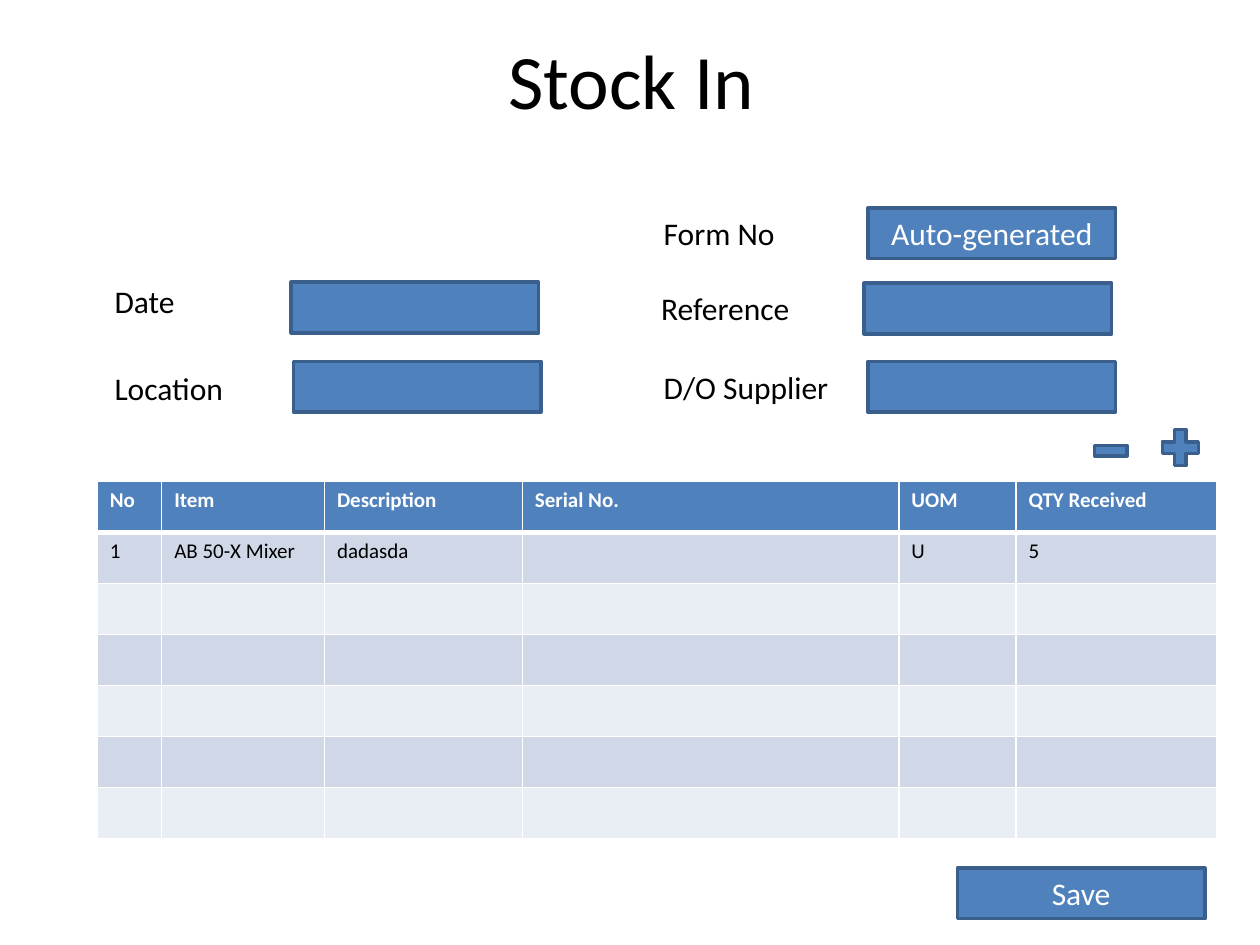
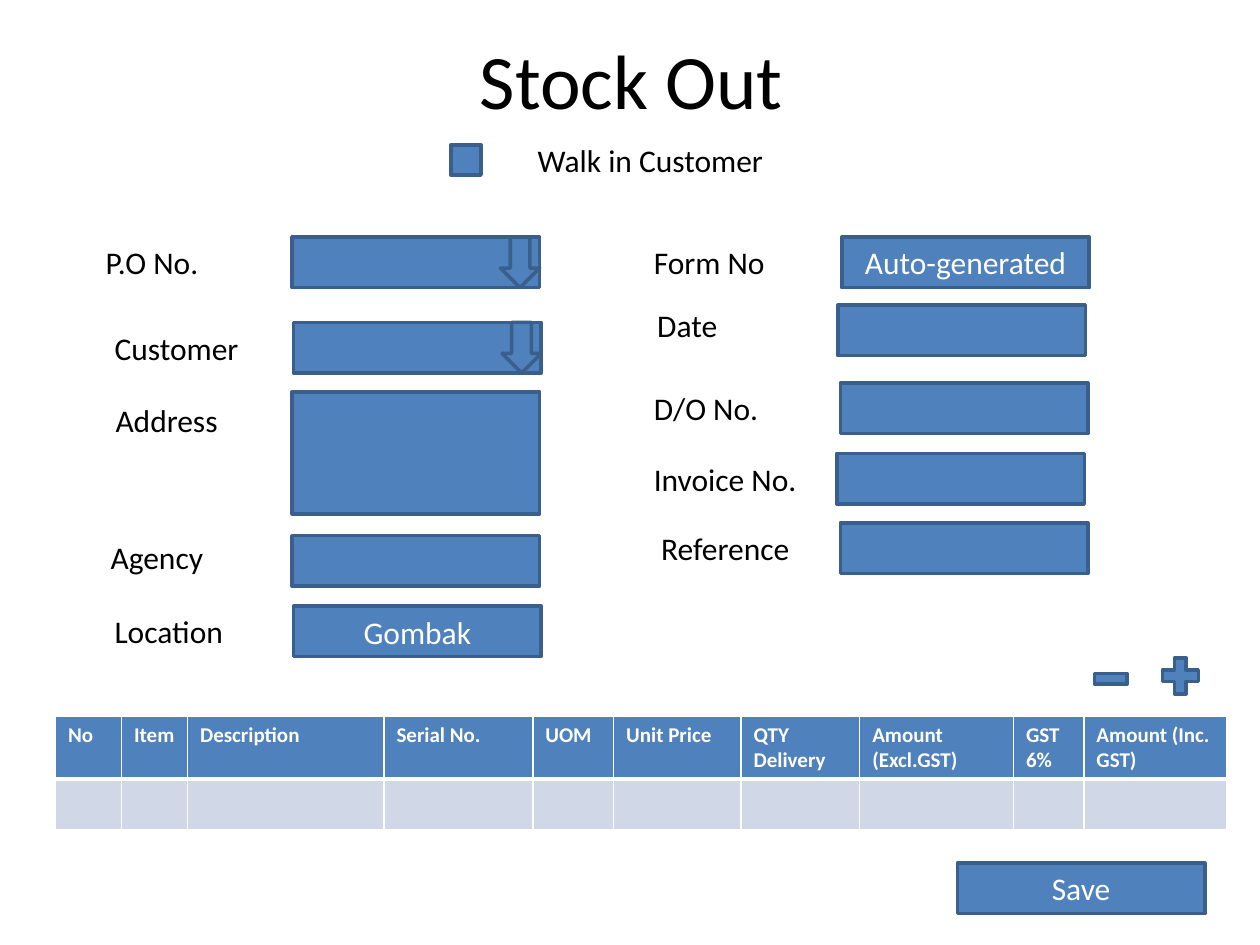
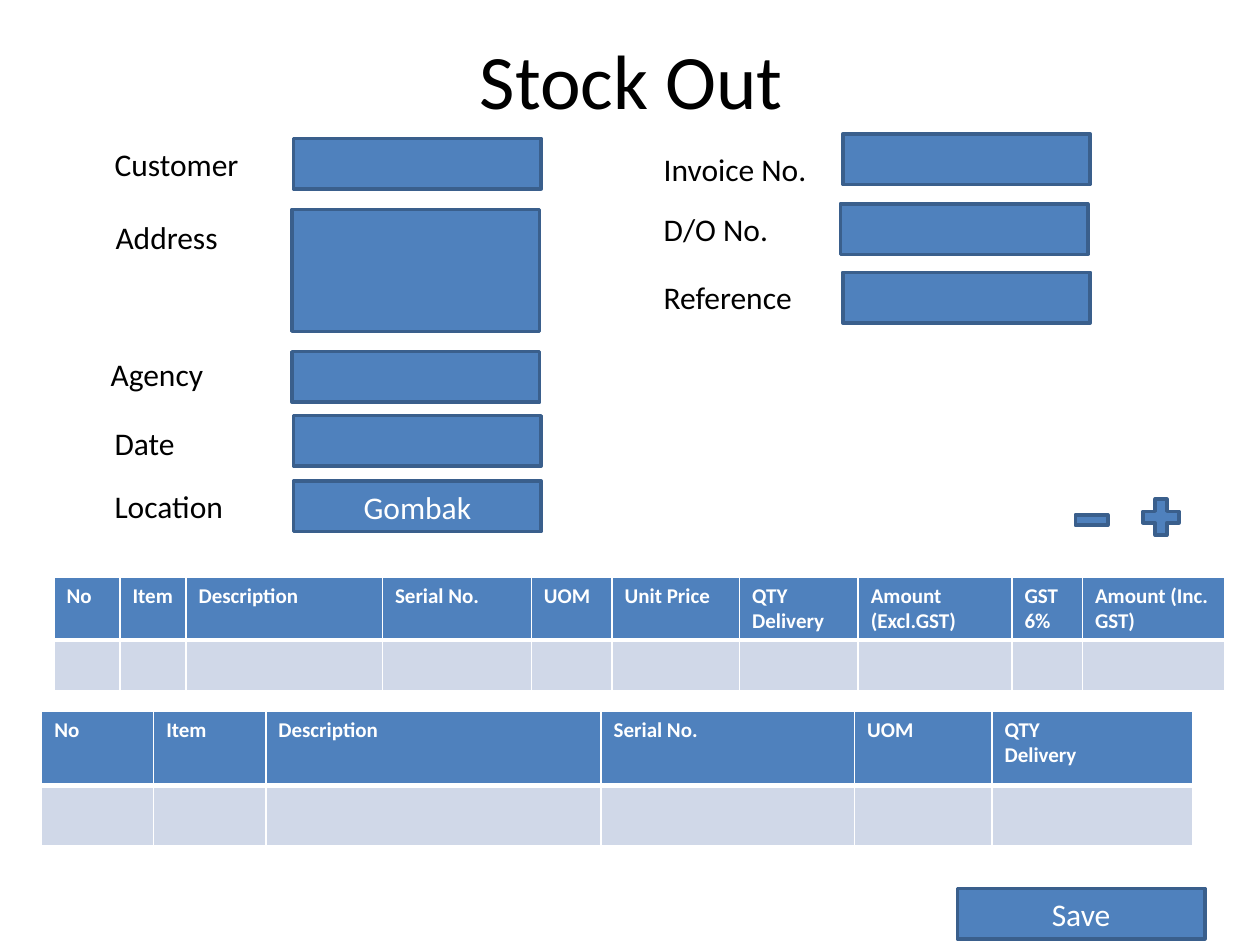
from dataclasses import dataclass

from lxml import etree
from pptx import Presentation
from pptx.dml.color import RGBColor
from pptx.enum.shapes import MSO_SHAPE
from pptx.enum.text import MSO_ANCHOR, MSO_AUTO_SIZE, PP_ALIGN
from pptx.oxml.ns import qn
from pptx.util import Cm, Pt

RECT, PLUS, MINUS = MSO_SHAPE.RECTANGLE, MSO_SHAPE.MATH_PLUS, MSO_SHAPE.MATH_MINUS
DOWN_ARROW = MSO_SHAPE.DOWN_ARROW
LEFT, CENTER = PP_ALIGN.LEFT, PP_ALIGN.CENTER
TOP, MIDDLE = MSO_ANCHOR.TOP, MSO_ANCHOR.MIDDLE
FIT_SHAPE = MSO_AUTO_SIZE.SHAPE_TO_FIT_TEXT

COLORS = {"blue": "4F81BD", "edge": "3A5F8C", "odd": "D0D8E8", "even": "E9EDF4",
          "black": "000000", "white": "FFFFFF"}
FONT = "Calibri"
BOX_W, BOX_H = 4.99, 1.02
ARROW_W = 0.79
ROW_H = 1.03
LABEL_WIDTHS = {"Date": 1.73, "Location": 2.72, "Reference": 3.12, "D/O Supplier": 3.89,
                "Form No": 2.77, "Customer": 3.05, "D/O No.": 2.64, "Invoice No.": 3.43,
                "Agency": 2.39, "Address": 2.59, "P.O No.": 2.39, "Walk in Customer": 5.11}
SALES_HEADER = ["No", "Item", "Description", "Serial No.", "UOM", "Unit Price",
                "QTY\nDelivery", "Amount (Excl.GST)", "GST 6%", "Amount (Inc. GST)"]
SALES_COLS = [1.33, 1.33, 3.96, 3, 1.63, 2.57, 2.39, 3.1, 1.42, 2.87]


@dataclass
class Field:
    """A label and its input box, placed relative to a form column."""
    label: str
    x: float
    y: float
    box_x: float
    box_dy: float = 0
    value: str = ""
    height: float = BOX_H
    arrow: bool = False


def color(name):
    """Return the named colour."""
    return RGBColor.from_string(COLORS[name])


def write(tf, text, size=18, fill="black", bold=False, align=LEFT, anchor=TOP):
    """Write text into a frame, one paragraph per line."""
    tf.vertical_anchor = anchor
    for i, line in enumerate(text.split("\n")):
        p = tf.add_paragraph() if i else tf.paragraphs[0]
        p.alignment = align
        r = p.add_run()
        r.text = line
        r.font.name, r.font.size, r.font.bold = FONT, Pt(size), bold
        r.font.color.rgb = color(fill)


def add_box(s, kind, left, top, width, height, text=""):
    """Add a blue shape with an optional centred caption."""
    sp = s.shapes.add_shape(kind, Cm(left), Cm(top), Cm(width), Cm(height))
    sp.shadow.inherit = False
    sp.fill.solid()
    sp.fill.fore_color.rgb = color("blue")
    sp.line.color.rgb = color("edge")
    sp.line.width = Pt(2)
    if text:
        write(sp.text_frame, text, fill="white", align=CENTER, anchor=MIDDLE)


def add_label(s, text, left, top):
    """Add a one-line label."""
    sp = s.shapes.add_textbox(Cm(left), Cm(top), Cm(LABEL_WIDTHS[text]), Cm(BOX_H))
    tf = sp.text_frame
    tf.word_wrap = False
    tf.auto_size = FIT_SHAPE
    write(tf, text)


def add_form(s, left, top, fields):
    """Add a column of labelled input boxes."""
    for f in fields:
        add_label(s, f.label, left + f.x, top + f.y)
        x, y = left + f.box_x, top + f.y + f.box_dy
        add_box(s, RECT, x, y, BOX_W, f.height, f.value)
        if f.arrow:
            add_box(s, DOWN_ARROW, x + BOX_W - ARROW_W, y, ARROW_W, BOX_H)


def add_row_buttons(s, left, top):
    """Add the minus and plus buttons above a table."""
    add_box(s, MINUS, left, top + 0.11, 0.89, 0.89)
    add_box(s, PLUS, left + 1.35, top, 0.99, 0.99)


def add_save(s, top):
    """Add the save button."""
    add_box(s, RECT, 19.3, top, BOX_W, BOX_H, "Save")


def set_borders(cell, **widths):
    """Give a cell white borders, with widths in points by side."""
    tc_pr = cell._tc.get_or_add_tcPr()
    for i, side in enumerate("LRTB"):
        ln = etree.Element(qn(f"a:ln{side}"), w=str(Pt(widths.get(side, 1))))
        fill = etree.SubElement(ln, qn("a:solidFill"))
        etree.SubElement(fill, qn("a:srgbClr"), val=COLORS["white"])
        tc_pr.insert(i, ln)


def add_grid(s, left, top, cols, heights, rows):
    """Add a banded table whose first row is the header."""
    frame = s.shapes.add_table(len(heights), len(cols), Cm(left), Cm(top),
                               Cm(sum(cols)), Cm(sum(heights)))
    table = frame.table
    for column, width in zip(table.columns, cols):
        column.width = Cm(width)
    for i, height in enumerate(heights):
        table.rows[i].height = Cm(height)
        texts = rows[i] if i < len(rows) else [""] * len(cols)
        band = "blue" if i == 0 else "odd" if i % 2 else "even"
        for j, text in enumerate(texts):
            cell = table.cell(i, j)
            cell.fill.solid()
            cell.fill.fore_color.rgb = color(band)
            set_borders(cell, B=3 if i == 0 else 1, T=3 if i == 1 else 1)
            if text:
                write(cell.text_frame, text, size=12, bold=i == 0,
                      fill="black" if i else "white")


def add_titled_slide(prs, title):
    """Add a title-only slide."""
    s = prs.slides.add_slide(prs.slide_layouts[5])
    sp = s.shapes.title
    sp.left, sp.top, sp.width, sp.height = Cm(1.3), Cm(0), Cm(22.86), Cm(3.18)
    write(sp.text_frame, title, size=44, align=CENTER, anchor=MIDDLE)
    return s


def build_stock_in(prs):
    """Build the stock-in form."""
    s = add_titled_slide(prs, "Stock In")
    add_grid(s, 1.96, 9.7, [1.3, 3.28, 3.99, 7.59, 2.36, 4.04], [ROW_H] * 7, [
        ["No", "Item", "Description", "Serial No.", "UOM", "QTY Received"],
        ["1", "AB 50-X Mixer", "dadasda", "", "U", "5"]])
    add_form(s, 2.06, 5.56, [
        Field("Date", 0, 0, 3.81, 0.13),
        Field("Location", 0, 1.76, 3.86, -0.03)])
    add_form(s, 13.13, 4.19, [
        Field("Form No", 0, 0, 4.37, value="Auto-generated"),
        Field("Reference", -0.05, 1.52, 4.29),
        Field("D/O Supplier", 0, 3.1, 4.37)])
    add_row_buttons(s, 21.95, 8.53)
    add_save(s, 17.5)


def build_stock_out_order(prs):
    """Build the stock-out form with order and customer pickers."""
    s = add_titled_slide(prs, "Stock Out")
    add_box(s, RECT, 9.09, 2.92, 0.61, 0.61)
    add_label(s, "Walk in Customer", 10.59, 2.72)
    add_form(s, 2.06, 4.78, [
        Field("P.O No.", -0.18, 0, 3.83, arrow=True),
        Field("Customer", 0, 1.72, 3.86, arrow=True),
        Field("Address", 0.02, 3.17, 3.83, -0.05, height=2.46),
        Field("Agency", -0.08, 5.94, 3.83, 0.08),
        Field("Location", 0, 7.44, 3.86, value="Gombak")])
    add_form(s, 12.93, 4.78, [
        Field("Form No", 0, 0, 4.04, value="Auto-generated"),
        Field("Date", 0.07, 1.27, 3.96, 0.1),
        Field("D/O No.", 0, 2.94, 4.01),
        Field("Invoice No.", 0, 4.36, 3.94),
        Field("Reference", 0.15, 5.76, 4.01)])
    add_row_buttons(s, 21.95, 13.13)
    add_grid(s, 1.12, 14.43, SALES_COLS, [ROW_H] * 2, [SALES_HEADER])
    add_save(s, 17.4)


def build_stock_out_delivery(prs):
    """Build the stock-out form with sales and delivery tables."""
    s = add_titled_slide(prs, "Stock Out")
    add_form(s, 2.06, 2.79, [
        Field("Customer", 0, 0, 3.86),
        Field("Address", 0.02, 1.48, 3.83, -0.05, height=2.46),
        Field("Agency", -0.08, 4.25, 3.83, 0.05),
        Field("Date", 0, 5.64, 3.86, -0.05),
        Field("Location", 0, 6.91, 3.86, value="Gombak")])
    add_form(s, 13.13, 2.9, [
        Field("Invoice No.", 0, 0, 3.86, -0.2),
        Field("D/O No.", 0, 1.21, 3.81),
        Field("Reference", 0, 2.59, 3.86)])
    add_row_buttons(s, 21.56, 9.93)
    add_grid(s, 1.09, 11.63, SALES_COLS, [ROW_H] * 2, [SALES_HEADER])
    add_grid(s, 0.84, 14.33, [2.26, 2.26, 6.76, 5.11, 2.77, 4.05], [1.5, 1.22],
             [SALES_HEADER[:5] + ["QTY\nDelivery"]])
    add_save(s, 17.91)


def main():
    """Build and save the deck."""
    prs = Presentation()
    prs.slide_width, prs.slide_height = Cm(25.4), Cm(19.05)
    build_stock_in(prs)
    build_stock_out_order(prs)
    build_stock_out_delivery(prs)
    prs.save("out.pptx")


if __name__ == "__main__":
    main()
